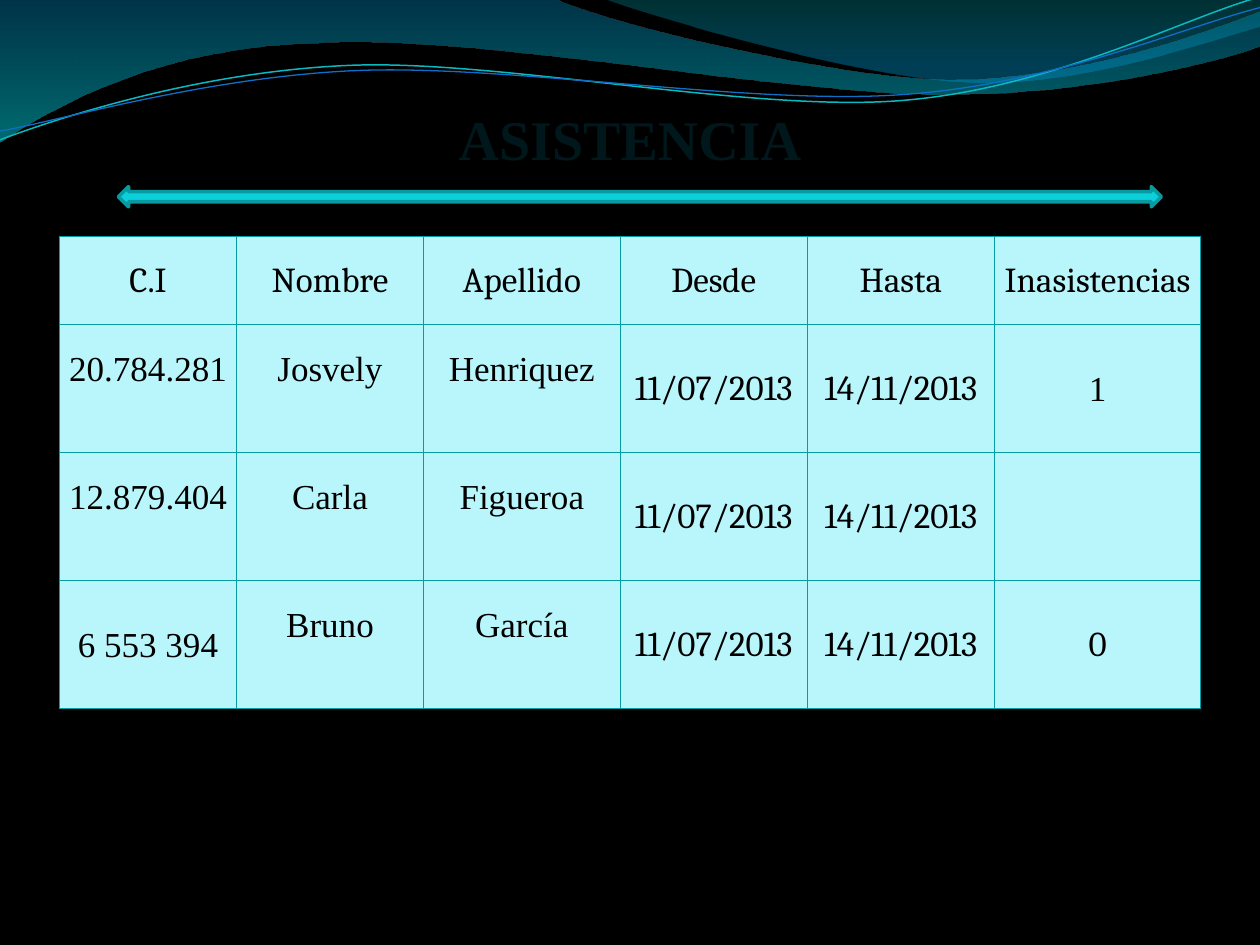
from lxml.etree import SubElement
from pptx import Presentation
from pptx.dml.color import RGBColor
from pptx.enum.shapes import MSO_SHAPE
from pptx.enum.text import MSO_ANCHOR, PP_ALIGN
from pptx.oxml.ns import qn
from pptx.util import Pt

COLORS = {
    "background": "000000", "title": "00171B", "text": "000000",
    "cell": "B9F6FC", "border": "069CA3",
    "arrow": "0BD0D9", "arrow_line": "089AA1",
    "wave_top": "0074A1", "wave_bottom": "00C6CF",
    "crest_top": "00A1A9", "crest_bottom": "008BBF",
    "teal_line": "0AB8BF", "blue_line": "0F6FC6",
}
SERIF, BODY = "Times New Roman", "Cambria"

WAVE = [(0, 0), (316.8, -0.7), (342.7, 12.2, 478.1, 45.4, 545.8, 45.4),
        (614.2, 45.4, 689.8, 18.7, 720, 6.5), (720.7, 25.9),
        (707.8, 31.7, 626.4, 54.7, 537.1, 54), (447.8, 54, 275, 20.2, 185, 24.5),
        (92.2, 25.9, 33.1, 59.8, -0.7, 81.4)]
CREST = [(344.9, -0.7), (366.5, 7.9, 491, 44.6, 553.7, 46.8),
         (616.3, 49.7, 691.9, 23, 720, 15.1), (720, 0)]
TEAL_LINE = [(0, 79.9), (34.6, 67, 113.8, 41, 199.4, 37.4),
             (284.4, 33.8, 427, 64.1, 513.4, 57.6),
             (599.8, 51.1, 675.4, 10.8, 718.6, -1.4)]
BLUE_LINE = [(0, 74.9), (33.8, 69.1, 118.1, 43.9, 203.8, 40.3),
             (290.2, 36.7, 430.6, 60.5, 516.2, 54),
             (601.9, 48.2, 677.5, 15.1, 720, 4.3)]

HEADERS = ["C.I", "Nombre", "Apellido", "Desde", "Hasta", "Inasistencias"]
PEOPLE = [("20.784.281", "Josvely", "Henriquez", "1"),
          ("12.879.404", "Carla", "Figueroa", ""),
          ("6 553 394", "Bruno", "García", "0")]
START, END = "11/07/2013", "14/11/2013"
COLUMN_WIDTHS = [101.2, 106.8, 112.5, 106.9, 106.9, 117.9]
HEADER_HEIGHT, ROW_HEIGHT = 50.4, 73.2
RAISED_MARGIN = 22


def color(name):
    return RGBColor.from_string(COLORS[name])


def add_outline(page, box, segments, closed):
    left, top = box
    anchors = [(Pt(left + s[-2]), Pt(top + s[-1])) for s in segments]
    builder = page.shapes.build_freeform(*anchors[0], scale=1.0)
    builder.add_line_segments(anchors[1:], close=closed)
    shape = builder.convert_to_shape()
    shape.shadow.inherit = False
    lines = list(shape._element.iter(qn("a:lnTo")))
    for line, segment in zip(lines, segments[1:]):
        if len(segment) == 6:
            line.tag = qn("a:cubicBezTo")
            for index, (x, y) in enumerate([segment[:2], segment[2:4]]):
                point = SubElement(line, qn("a:pt"),
                                   x=str(Pt(left + x) - shape.left),
                                   y=str(Pt(top + y) - shape.top))
                line.insert(index, point)
    return shape


def add_wave(page, box, segments, stops):
    shape = add_outline(page, box, segments, True)
    shape.line.fill.background()
    shape.fill.gradient()
    shape.fill.gradient_angle = 270
    for stop, (position, name, _) in zip(shape.fill.gradient_stops, stops):
        stop.position = position
        stop.color.rgb = color(name)
    for tint, (_, _, opacity) in zip(shape._element.iter(qn("a:srgbClr")), stops):
        SubElement(tint, qn("a:alpha"), val=str(opacity * 1000))


def add_header_waves(page, box):
    add_wave(page, box, WAVE, [(0, "wave_top", 45), (1, "wave_bottom", 55)])
    add_wave(page, box, CREST, [(0, "crest_top", 30), (0.8, "crest_bottom", 45)])
    for segments, name, width in [(TEAL_LINE, "teal_line", 0.85),
                                  (BLUE_LINE, "blue_line", 0.75)]:
        shape = add_outline(page, box, segments, False)
        shape.fill.background()
        shape.line.color.rgb = color(name)
        shape.line.width = Pt(width)


def style_paragraph(para, size, font, name):
    para.alignment = PP_ALIGN.CENTER
    para.font.size = Pt(size)
    para.font.name = font
    para.font.color.rgb = color(name)


def add_title(page, box):
    title = page.shapes.add_textbox(*map(Pt, box))
    frame = title.text_frame
    frame.word_wrap = True
    frame.vertical_anchor = MSO_ANCHOR.MIDDLE
    para = frame.paragraphs[0]
    para.text = "ASISTENCIA"
    style_paragraph(para, 32, SERIF, "title")
    para.font.bold = True


def add_arrow(page, box):
    arrow = page.shapes.add_shape(MSO_SHAPE.LEFT_RIGHT_ARROW, *map(Pt, box))
    arrow.shadow.inherit = False
    arrow.fill.solid()
    arrow.fill.fore_color.rgb = color("arrow")
    arrow.line.color.rgb = color("arrow_line")
    arrow.line.width = Pt(2)


def style_cell(cell, text, font, raised):
    properties = cell._tc.get_or_add_tcPr()
    for side in ("a:lnL", "a:lnR", "a:lnT", "a:lnB"):
        border = SubElement(properties, qn(side), w=str(Pt(0.75)))
        fill = SubElement(border, qn("a:solidFill"))
        SubElement(fill, qn("a:srgbClr"), val=COLORS["border"])
    cell.fill.solid()
    cell.fill.fore_color.rgb = color("cell")
    cell.vertical_anchor = MSO_ANCHOR.MIDDLE
    cell.margin_left = cell.margin_right = cell.margin_top = Pt(0.7)
    cell.margin_bottom = Pt(RAISED_MARGIN if raised else 0)
    para = cell.text_frame.paragraphs[0]
    style_paragraph(para, 20, font, "text")
    if text:
        para.text = text


def add_attendance_table(page, box):
    left, top = box
    rows = [HEADERS] + [[number, first, last, START, END, absences]
                        for number, first, last, absences in PEOPLE]
    heights = [HEADER_HEIGHT] + [ROW_HEIGHT] * len(PEOPLE)
    table = page.shapes.add_table(len(rows), len(HEADERS), Pt(left), Pt(top),
                                  Pt(sum(COLUMN_WIDTHS)), Pt(sum(heights))).table
    for column, width in zip(table.columns, COLUMN_WIDTHS):
        column.width = Pt(width)
    for r, (values, height) in enumerate(zip(rows, heights)):
        table.rows[r].height = Pt(height)
        for c, text in enumerate(values):
            serif = r > 0 and (c < 3 or text == "1")
            raised = r > 0 and c < 3 and (r, c) != (3, 0)
            style_cell(table.cell(r, c), text, SERIF if serif else BODY, raised)


def main():
    deck = Presentation()
    deck.slide_width, deck.slide_height = Pt(720), Pt(540)
    page = deck.slides.add_slide(deck.slide_layouts[6])
    page.background.fill.solid()
    page.background.fill.fore_color.rgb = color("background")
    add_header_waves(page, (0, 0))
    add_title(page, (60, 55.7, 600, 46))
    add_arrow(page, (67.7, 106.6, 596, 11.6))
    add_attendance_table(page, (34, 135))
    deck.save("out.pptx")


if __name__ == "__main__":
    main()
